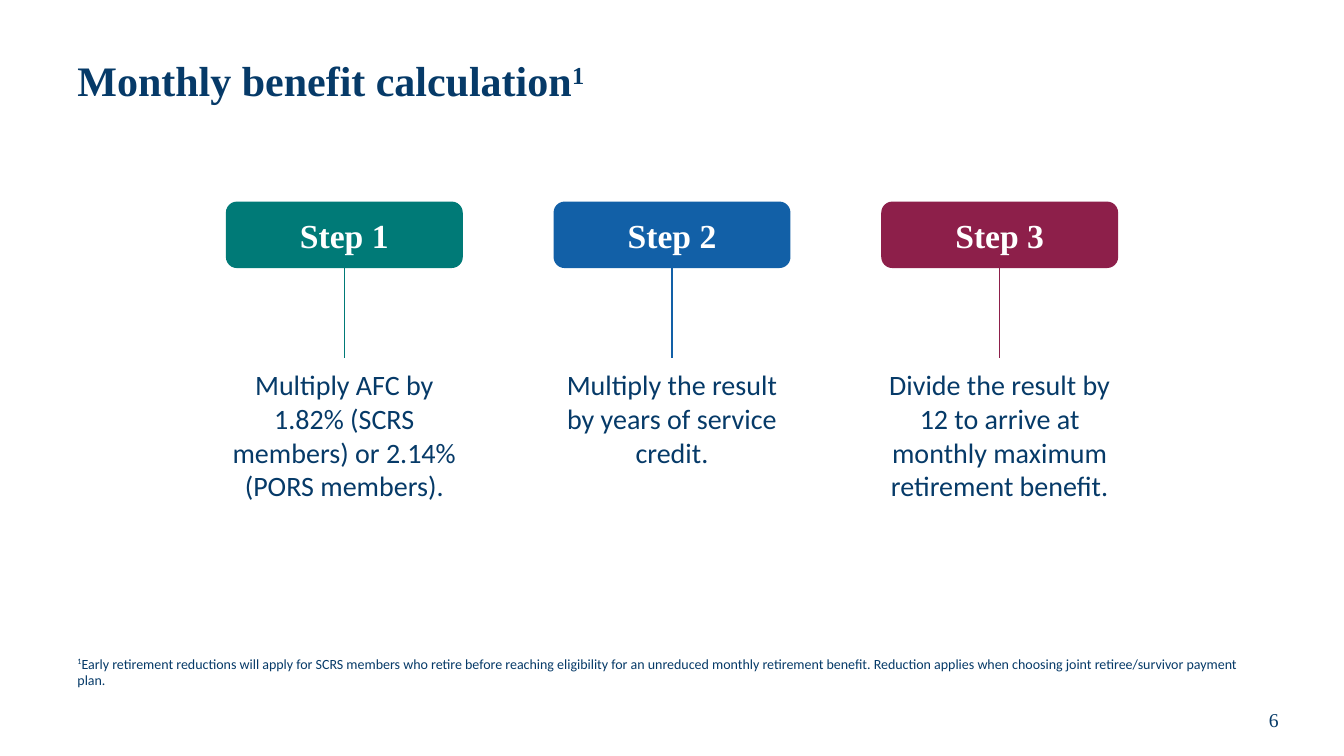
from lxml import etree
from pptx import Presentation
from pptx.dml.color import RGBColor
from pptx.enum.shapes import MSO_CONNECTOR, MSO_SHAPE
from pptx.enum.text import MSO_ANCHOR, PP_ALIGN
from pptx.oxml.ns import qn
from pptx.util import Inches, Pt

LEFT, CENTER = PP_ALIGN.LEFT, PP_ALIGN.CENTER
TOP, MIDDLE = MSO_ANCHOR.TOP, MSO_ANCHOR.MIDDLE
ROUNDED = MSO_SHAPE.ROUNDED_RECTANGLE
STRAIGHT = MSO_CONNECTOR.STRAIGHT

NAVY = RGBColor(0x06, 0x3A, 0x68)
TEAL = RGBColor(0x00, 0x7A, 0x77)
BLUE = RGBColor(0x12, 0x60, 0xA7)
WINE = RGBColor(0x8D, 0x1F, 0x4A)
WHITE = RGBColor(0xFF, 0xFF, 0xFF)

SLIDE_W, SLIDE_H = 13.33, 7.5
MARGIN = 0.67
CONTENT_W = 12
STEP_PITCH = 3.25
FIRST_CENTER = SLIDE_W / 2 - STEP_PITCH
LABEL_W, LABEL_H, LABEL_TOP = 2.35, 0.66, 2
DETAIL_W, DETAIL_H, DETAIL_TOP = 2.5, 1.44, 3.55

TITLE = {"name": "Times New Roman", "size": Pt(30), "bold": True}
LABEL = {"name": "Times New Roman", "size": Pt(24), "bold": True}
DETAIL = {"name": "Calibri", "size": Pt(20)}
FOOTNOTE = {"name": "Calibri", "size": Pt(10)}
NUMBER = {"name": "Times New Roman", "size": Pt(14)}

STEPS = [
    ("Step 1", TEAL, "Multiply AFC by 1.82% (SCRS members) or 2.14% (PORS members)."),
    ("Step 2", BLUE, "Multiply the result by years of service credit."),
    ("Step 3", WINE, "Divide the result by 12 to arrive at monthly maximum retirement benefit."),
]


def add_run(p, text, style, color, raised=False):
    r = p.add_run()
    r.text = text
    for name, value in style.items():
        setattr(r.font, name, value)
    r.font.color.rgb = color
    if raised:
        r._r.get_or_add_rPr().set("baseline", "30000")


def set_frame(sp, align, anchor, inset=None):
    tf = sp.text_frame
    tf.word_wrap = True
    tf.vertical_anchor = anchor
    if inset is not None:
        for side in ("left", "right", "top", "bottom"):
            setattr(tf, f"margin_{side}", Inches(inset))
    p = tf.paragraphs[0]
    p.alignment = align
    return p


def add_text(slide, box, align, anchor, inset=None):
    sp = slide.shapes.add_textbox(*map(Inches, box))
    return set_frame(sp, align, anchor, inset)


def add_stem(slide, x, color):
    line = slide.shapes.add_connector(
        STRAIGHT, Inches(x), Inches(LABEL_TOP + LABEL_H), Inches(x), Inches(DETAIL_TOP))
    line.line.color.rgb = color
    line.line.width = Pt(0.75)
    etree.SubElement(line._element.spPr, qn("a:effectLst"))


def add_label(slide, x, text, color):
    box = (x - LABEL_W / 2, LABEL_TOP, LABEL_W, LABEL_H)
    sp = slide.shapes.add_shape(ROUNDED, *map(Inches, box))
    sp.shadow.inherit = False
    sp.fill.solid()
    sp.fill.fore_color.rgb = color
    sp.line.fill.background()
    add_run(set_frame(sp, CENTER, MIDDLE, 0.1), text, LABEL, WHITE)


def add_step(slide, x, label, color, detail):
    add_stem(slide, x, color)
    add_label(slide, x, label, color)
    box = (x - DETAIL_W / 2, DETAIL_TOP, DETAIL_W, DETAIL_H)
    add_run(add_text(slide, box, CENTER, TOP, 0.1), detail, DETAIL, NAVY)


def add_title(slide):
    p = add_text(slide, (MARGIN, 0.25, CONTENT_W, 1.15), LEFT, MIDDLE)
    p.line_spacing = 0.9
    add_run(p, "Monthly benefit calculation", TITLE, NAVY)
    add_run(p, "1", TITLE, NAVY, raised=True)


def add_footnote(slide):
    p = add_text(slide, (MARGIN, 6.45, CONTENT_W, 0.44), LEFT, TOP)
    add_run(p, "1", FOOTNOTE, NAVY, raised=True)
    add_run(p, "Early retirement reductions will apply for SCRS members who retire "
               "before reaching eligibility for an unreduced monthly retirement benefit. "
               "Reduction applies when choosing joint retiree/survivor payment plan.",
            FOOTNOTE, NAVY)


def main():
    prs = Presentation()
    prs.slide_width, prs.slide_height = Inches(SLIDE_W), Inches(SLIDE_H)
    slide = prs.slides.add_slide(prs.slide_layouts[6])
    add_title(slide)
    for i, (label, color, detail) in enumerate(STEPS):
        add_step(slide, FIRST_CENTER + i * STEP_PITCH, label, color, detail)
    add_footnote(slide)
    number = add_text(slide, (12.05, 6.89, 1.17, 0.5), CENTER, MIDDLE)
    add_run(number, "6", NUMBER, NAVY)
    prs.save("out.pptx")


if __name__ == "__main__":
    main()
